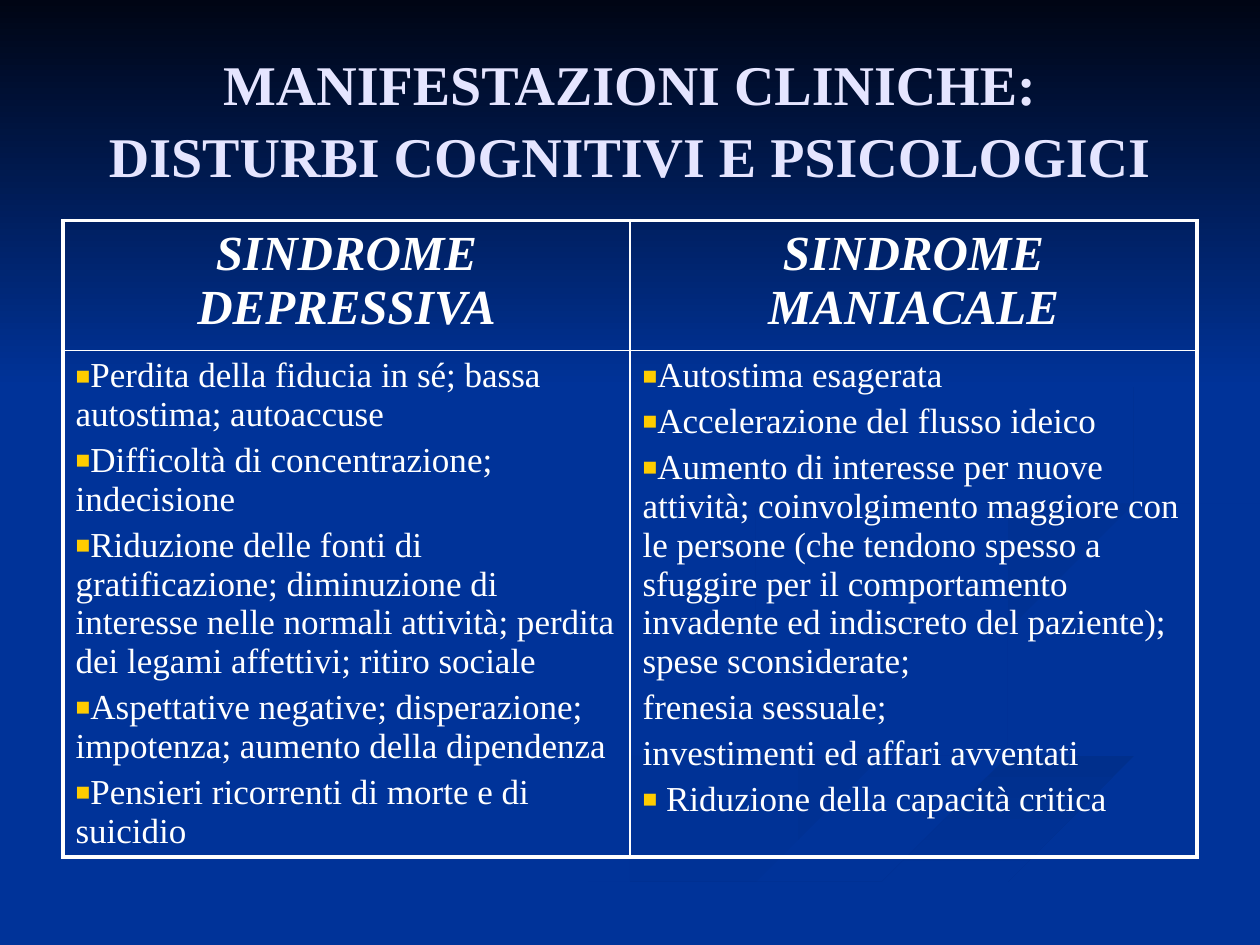
from lxml import etree
from pptx import Presentation
from pptx.dml.color import RGBColor
from pptx.enum.shapes import MSO_SHAPE
from pptx.enum.text import MSO_ANCHOR, MSO_AUTO_SIZE, PP_ALIGN
from pptx.oxml.ns import qn
from pptx.util import Inches, Pt

CENTER, LEFT = PP_ALIGN.CENTER, PP_ALIGN.LEFT
MIDDLE, TOP = MSO_ANCHOR.MIDDLE, MSO_ANCHOR.TOP
NO_AUTOFIT = MSO_AUTO_SIZE.NONE
RECTANGLE = MSO_SHAPE.RECTANGLE

WHITE = RGBColor(0xFF, 0xFF, 0xFF)
LAVENDER = RGBColor(0xE5, 0xE5, 0xFF)
GOLD = RGBColor(0xFF, 0xCC, 0x00)
BLUE = RGBColor(0x00, 0x33, 0x99)
SHADE = RGBColor(0x00, 0x31, 0x93)
DARK_SHADE = RGBColor(0x00, 0x2F, 0x8C)
NIGHT = RGBColor(0x00, 0x05, 0x14)

FONT = "Times New Roman"
WIDTH, HEIGHT = Inches(10), Inches(7.5)
MARGIN = 0.05  # share of the slide's width
OUTER, INNER = 2.25, 1
CURVE_STEPS = 5

TITLE = "MANIFESTAZIONI CLINICHE:\nDISTURBI COGNITIVI E PSICOLOGICI"
HEADINGS = ["SINDROME DEPRESSIVA", "SINDROME MANIACALE"]
DEPRESSIVE = [
    "Perdita della fiducia in sé; bassa autostima; autoaccuse",
    "Difficoltà di concentrazione; indecisione",
    "Riduzione delle fonti di gratificazione; diminuzione di interesse nelle "
    "normali attività; perdita dei legami affettivi; ritiro sociale",
    "Aspettative negative; disperazione; impotenza; aumento della dipendenza",
    "Pensieri ricorrenti di morte e di suicidio",
]
MANIC = [
    "Autostima esagerata",
    "Accelerazione del flusso ideico",
    "Aumento di interesse per nuove attività; coinvolgimento maggiore con le "
    "persone (che tendono spesso a sfuggire per il comportamento invadente ed "
    "indiscreto del paziente); spese sconsiderate;",
    "frenesia sessuale;",
    "investimenti ed affari avventati",
    " Riduzione della capacità critica",
]
UNBULLETED = {"frenesia sessuale;", "investimenti ed affari avventati"}

# First colour, last colour, angle, and the two edges in inches
RIBBONS = [
    (BLUE, SHADE, 0,
     [(5.75, 4.6), (6.3, 5.05), (7.8, 5.56), (7.3, 6.02), (5, 6.61), (3, 7.49)],
     [(3.6, 7.49), (5.6, 6.65), (7.8, 6.05), (7.8, 5.53), (6.3, 5.02), (5.75, 4.6)]),
    (DARK_SHADE, BLUE, 90,
     [(5.03, 7.49), (6.3, 6.93), (8, 6.38), (9.98, 5.81)],
     [(9.98, 6.09), (8.2, 6.51), (6.7, 7.02), (5.7, 7.49)]),
    (SHADE, BLUE, 45,
     [(8.26, 4.96), (7.82, 4.6), (8.5, 4.27), (9.98, 4.02)],
     [(9.98, 4.2), (8.8, 4.39), (8.05, 4.7), (8.26, 4.96)]),
    (DARK_SHADE, BLUE, 45,
     [(7.62, 2.33), (8.8, 3.07), (8.76, 3.78), (6.8, 4.3), (5.93, 4.7), (6.22, 5)],
     [(6.22, 5), (5.77, 4.62), (6.5, 4.2), (8.6, 3.7), (8.76, 3.06), (7.62, 2.33)]),
]


def smooth_edge(knots):
    """Sample a Catmull-Rom curve through the knots."""
    padded = [knots[0], *knots, knots[-1]]
    points = [knots[0]]
    for quad in zip(padded, padded[1:], padded[2:], padded[3:]):
        for step in range(1, CURVE_STEPS + 1):
            t = step / CURVE_STEPS
            points.append(tuple(
                b + t * (c - a) / 2 + t**2 * (2 * a - 5 * b + 4 * c - d) / 2
                + t**3 * (3 * b - a - 3 * c + d) / 2
                for a, b, c, d in zip(*quad)))
    return points


def shade(shape, first, last, angle):
    shape.shadow.inherit = False
    shape.line.fill.background()
    shape.fill.gradient()
    shape.fill.gradient_angle = (360 - angle) % 360
    for stop, color in zip(shape.fill.gradient_stops, (first, last)):
        stop.color.rgb = color


def add_ribbon(page, first, last, angle, there, back):
    outline = smooth_edge(there) + smooth_edge(back)
    builder = page.shapes.build_freeform(*outline[0], scale=Inches(1))
    builder.add_line_segments(outline[1:], close=True)
    shade(builder.convert_to_shape(), first, last, angle)


def add_sky(page):
    sky = page.shapes.add_shape(RECTANGLE, 0, 0, WIDTH, int(HEIGHT * 0.41))
    shade(sky, NIGHT, BLUE, 90)


def write(para, text, *, size, color=WHITE, bold=False, italic=False,
          align=LEFT, before=0, spacing=1.0):
    para.text = text
    para.alignment = align
    para.space_before = Pt(before)
    para.line_spacing = spacing
    for span in para.runs:
        font = span.font
        font.name, font.size = FONT, Pt(size)
        font.bold, font.italic = bold, italic
        font.color.rgb = color


def add_bullet(para):
    props = para._p.get_or_add_pPr()
    props.set("marL", "0")
    props.set("indent", "0")
    color = etree.SubElement(props, qn("a:buClr"))
    etree.SubElement(color, qn("a:srgbClr"), val=str(GOLD))
    etree.SubElement(props, qn("a:buSzPct"), val="70000")
    etree.SubElement(props, qn("a:buFont"), typeface=FONT)
    etree.SubElement(props, qn("a:buChar"), char="■")


def style_cell(cell, row, column):
    """Leave the cell clear, with heavy lines on the table's outside."""
    props = cell._tc.get_or_add_tcPr()
    sides = {"L": column == 0, "R": column == 1, "T": row == 0, "B": row == 1}
    for side, outside in sides.items():
        width = Pt(OUTER if outside else INNER)
        line = etree.SubElement(props, qn(f"a:ln{side}"), w=str(width))
        fill = etree.SubElement(line, qn("a:solidFill"))
        etree.SubElement(fill, qn("a:srgbClr"), val=str(WHITE))
    cell.fill.background()
    cell.vertical_anchor = TOP


def add_title(page):
    title = page.shapes.title
    title.left, title.top = int(WIDTH * MARGIN), int(HEIGHT * 0.04)
    title.width, title.height = int(WIDTH * (1 - 2 * MARGIN)), Inches(1.25)
    frame = title.text_frame
    frame.auto_size, frame.vertical_anchor = NO_AUTOFIT, MIDDLE
    write(frame.paragraphs[0], TITLE, size=32, color=LAVENDER, bold=True,
          align=CENTER, spacing=1.07)
    # The placeholder starts at the back; bring it over the ribbons
    page.shapes._spTree.append(title._element)


def add_comparison(page):
    row_heights = [Inches(1.03), Inches(3.97)]
    table = page.shapes.add_table(
        2, 2, int(WIDTH * MARGIN), Inches(1.75),
        int(WIDTH * (1 - 2 * MARGIN)), sum(row_heights)).table
    table.first_row = table.horz_banding = False
    for row, height in zip(table.rows, row_heights):
        row.height = height
    for column, (heading, signs) in enumerate(zip(HEADINGS, (DEPRESSIVE, MANIC))):
        top, body = table.cell(0, column), table.cell(1, column)
        style_cell(top, 0, column)
        style_cell(body, 1, column)
        write(top.text_frame.paragraphs[0], heading, size=28, bold=True,
              italic=True, align=CENTER, before=5.6)
        frame = body.text_frame
        for index, sign in enumerate(signs):
            para = frame.add_paragraph() if index else frame.paragraphs[0]
            write(para, sign, size=20, before=4)
            if sign not in UNBULLETED:
                add_bullet(para)


def main():
    deck = Presentation()
    deck.slide_width, deck.slide_height = WIDTH, HEIGHT
    page = deck.slides.add_slide(deck.slide_layouts[5])
    page.background.fill.solid()
    page.background.fill.fore_color.rgb = BLUE
    for ribbon in RIBBONS:
        add_ribbon(page, *ribbon)
    add_sky(page)
    add_title(page)
    add_comparison(page)
    deck.save("out.pptx")


if __name__ == "__main__":
    main()
